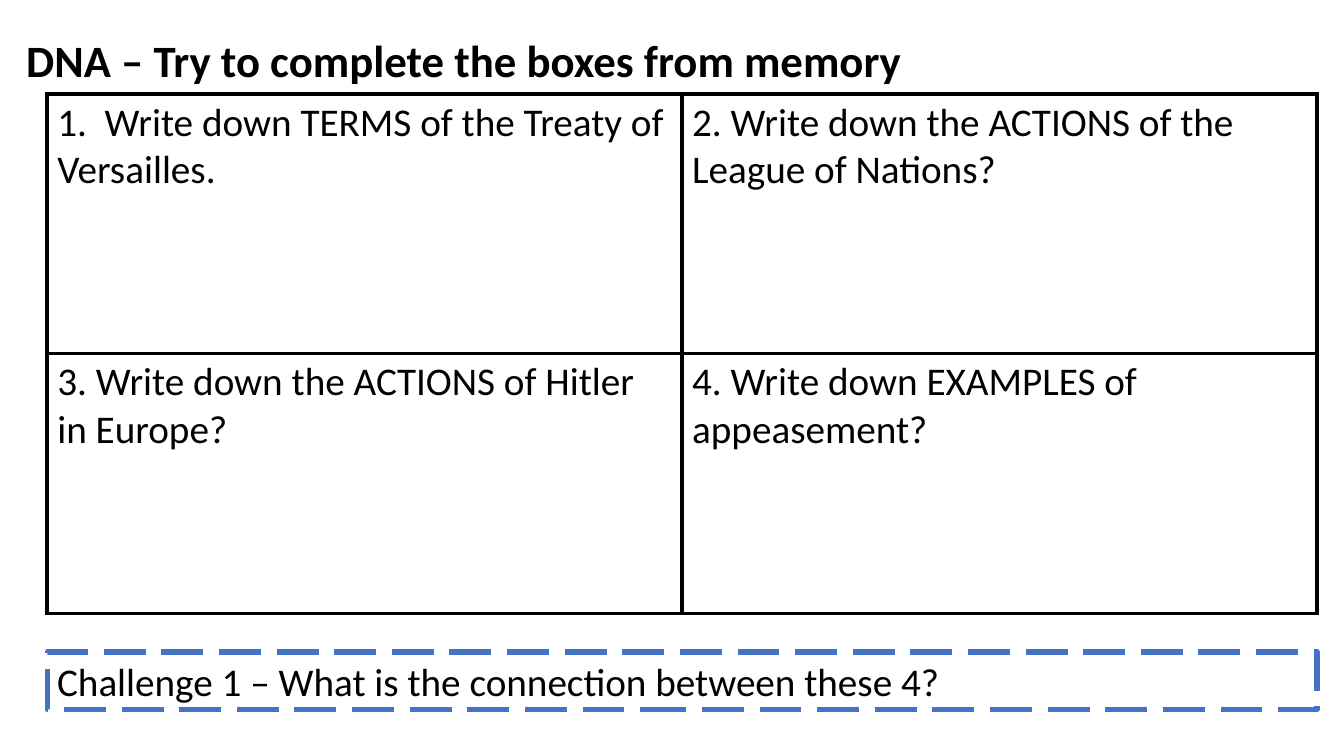
"""Build a recall slide with four question boxes and a challenge."""
from dataclasses import dataclass

from lxml.etree import SubElement
from pptx import Presentation
from pptx.dml.color import RGBColor
from pptx.enum.dml import MSO_LINE_DASH_STYLE as Dash
from pptx.enum.shapes import MSO_SHAPE as Shape
from pptx.enum.text import MSO_ANCHOR as Anchor, PP_ALIGN as Align
from pptx.oxml.ns import qn
from pptx.util import Cm, Pt

TITLE = "DNA – Try to complete the boxes from memory"
QUESTIONS = [
    ["1.  Write down TERMS of the Treaty of Versailles.",
     "2. Write down the ACTIONS of the League of Nations?"],
    ["3. Write down the ACTIONS of Hitler in Europe?",
     "4. Write down EXAMPLES of appeasement?"],
]
CHALLENGE = "Challenge 1 – What is the connection between these 4?"


@dataclass(frozen=True)
class Theme:
    """Colours, font and sizes of the slide."""
    font: str = "Calibri"
    ink: str = "000000"
    paper: str = "FFFFFF"
    accent: str = "4472C4"
    title_size: int = 32
    body_size: int = 28
    grid_width: float = 3
    dash_width: float = 3.75


THEME = Theme()
LEFT, CONTENT_WIDTH = Cm(1.19), Cm(32)
GRID_TOP, ROW_HEIGHT = Cm(2.36), Cm(6.55)


def write_text(frame, text, size=THEME.body_size, bold=False):
    """Put one left-aligned paragraph in a text frame."""
    frame.word_wrap = True
    paragraph = frame.paragraphs[0]
    paragraph.alignment = Align.LEFT
    run = paragraph.add_run()
    run.text = text
    font = run.font
    font.name, font.size, font.bold = THEME.font, Pt(size), bold
    font.color.rgb = RGBColor.from_string(THEME.ink)


def add_borders(cell):
    """Draw a solid line on every side of a table cell."""
    properties = cell._tc.get_or_add_tcPr()
    for side in ("a:lnL", "a:lnR", "a:lnT", "a:lnB"):
        line = SubElement(properties, qn(side), w=str(Pt(THEME.grid_width)))
        fill = SubElement(line, qn("a:solidFill"))
        SubElement(fill, qn("a:srgbClr"), val=THEME.ink)


def add_questions(slide):
    """Lay the questions out in an even grid."""
    row_count, column_count = len(QUESTIONS), len(QUESTIONS[0])
    frame = slide.shapes.add_table(row_count, column_count, LEFT, GRID_TOP,
                                   CONTENT_WIDTH, ROW_HEIGHT * row_count)
    table = frame.table
    table.first_row = table.horz_banding = False
    for row, questions in enumerate(QUESTIONS):
        for column, question in enumerate(questions):
            cell = table.cell(row, column)
            write_text(cell.text_frame, question)
            add_borders(cell)
            cell.fill.background()


def add_challenge(slide):
    """Add the dashed challenge box under the grid."""
    shape = slide.shapes.add_shape(Shape.RECTANGLE, LEFT, Cm(16.43),
                                   CONTENT_WIDTH, Cm(1.45))
    shape.shadow.inherit = False
    shape.fill.solid()
    shape.fill.fore_color.rgb = RGBColor.from_string(THEME.paper)
    shape.line.color.rgb = RGBColor.from_string(THEME.accent)
    shape.line.width = Pt(THEME.dash_width)
    shape.line.dash_style = Dash.LONG_DASH
    shape.text_frame.vertical_anchor = Anchor.TOP
    write_text(shape.text_frame, CHALLENGE)


def main():
    """Create the slide and save it."""
    presentation = Presentation()
    presentation.slide_width, presentation.slide_height = Cm(33.87), Cm(19.05)
    slide = presentation.slides.add_slide(presentation.slide_layouts[6])
    add_questions(slide)
    add_challenge(slide)
    title = slide.shapes.add_textbox(Cm(0.41), Cm(0.69), CONTENT_WIDTH, Cm(1.63))
    write_text(title.text_frame, TITLE, size=THEME.title_size, bold=True)
    presentation.save("out.pptx")


if __name__ == "__main__":
    main()
